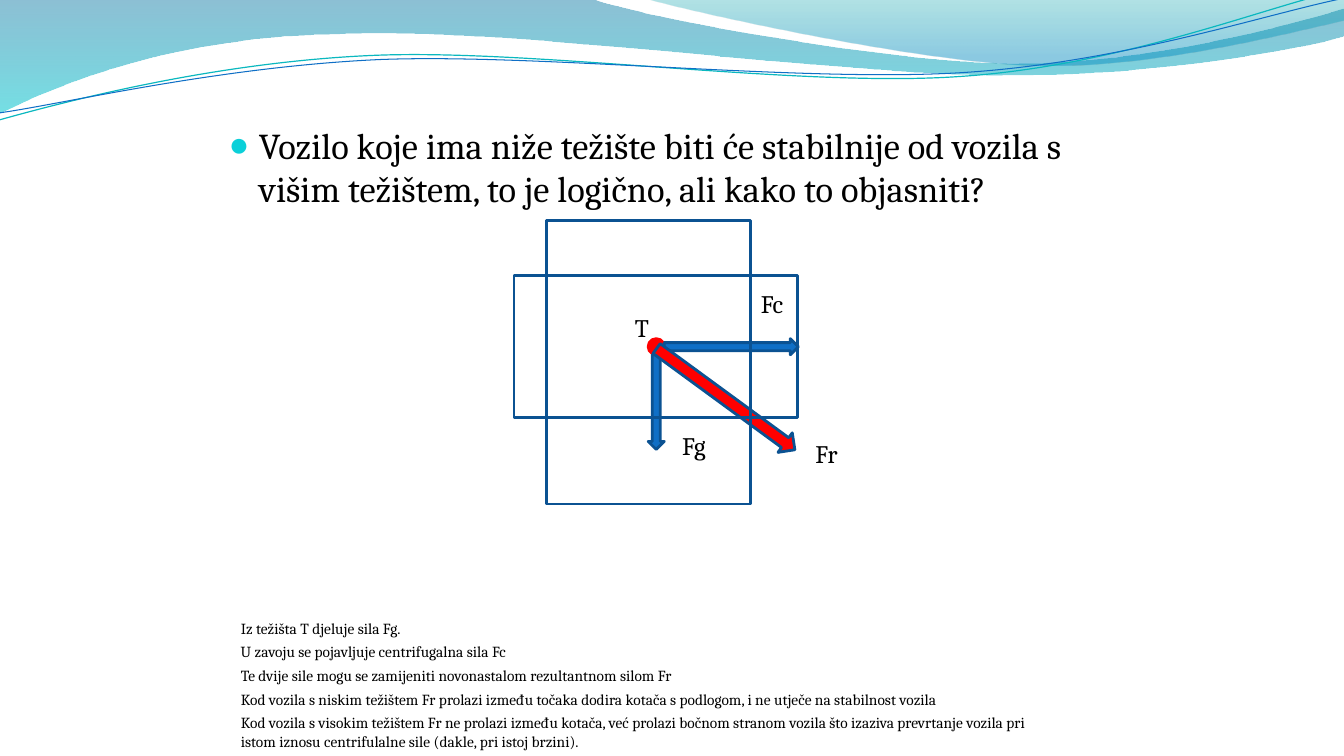
from lxml.etree import SubElement
from pptx import Presentation
from pptx.dml.color import RGBColor
from pptx.enum.shapes import MSO_SHAPE
from pptx.enum.text import MSO_AUTO_SIZE, PP_ALIGN
from pptx.oxml.ns import qn
from pptx.util import Pt

BLACK = RGBColor(0x00, 0x00, 0x00)
RED = RGBColor(0xFF, 0x00, 0x00)
BLUE = RGBColor(0x0F, 0x6F, 0xC6)
DARK_BLUE = RGBColor(0x0B, 0x52, 0x92)
TEAL_LINE = RGBColor(0x0A, 0xB8, 0xBF)
DEEP_BLUE = RGBColor(0x00, 0x74, 0xA1)
CYAN = RGBColor(0x00, 0xC6, 0xCF)
TEAL = RGBColor(0x00, 0xA1, 0xA9)
SKY_BLUE = RGBColor(0x00, 0x8B, 0xBF)
BULLET_COLOUR = RGBColor(0x0B, 0xD0, 0xD9)
FONT = "Cambria"

presentation = Presentation()
presentation.slide_width = Pt(960)
presentation.slide_height = Pt(540)
slide = presentation.slides.add_slide(presentation.slide_layouts[1])
title = slide.shapes.title
title.element.getparent().remove(title.element)
body = slide.placeholders[1]


def add_wave(start, segments, closed):
    """Draw an outline; pairs are line ends, sixes are cubic Bézier curves."""
    points = [(Pt(x), Pt(y)) for segment in segments
              for x, y in zip(segment[::2], segment[1::2])]
    builder = slide.shapes.build_freeform(Pt(start[0]), Pt(start[1]))
    builder.add_line_segments(points, close=closed)
    wave = builder.convert_to_shape()
    wave.shadow.inherit = False
    steps = iter(list(wave.element.iter(qn("a:lnTo"))))
    for segment in segments:
        first = next(steps)
        if len(segment) == 6:
            first.tag = qn("a:cubicBezTo")
            for step in (next(steps), next(steps)):
                first.append(step[0])
                step.getparent().remove(step)
    return wave


def add_label(text, left, top, width, height, size, wrap):
    label = slide.shapes.add_textbox(Pt(left), Pt(top), Pt(width), Pt(height))
    label.text_frame.word_wrap = wrap
    label.text_frame.auto_size = MSO_AUTO_SIZE.SHAPE_TO_FIT_TEXT
    label.text_frame.text = text
    font = label.text_frame.paragraphs[0].runs[0].font
    font.name = FONT
    font.size = Pt(size)
    font.color.rgb = BLACK


# Header bands: start, segments, gradient stops (position, colour, opacity)
bands = [
    ((0, 0),
     [(422.6, -0.7), (456.5, 12.2, 637.2, 45.4, 727.9, 45.4),
      (819.4, 45.4, 920.2, 18.7, 959.8, 6.5), (961.2, 25.9),
      (943.9, 31.7, 835.2, 54.7, 715.7, 54), (596.9, 54, 366.5, 20.2, 247, 24.5),
      (123.8, 25.9, 43.9, 59.8, -0.7, 81.4), (0, 0)],
     [(0, DEEP_BLUE, 45), (1, CYAN, 55)]),
    ((460.1, -0.7),
     [(488.9, 7.9, 654.5, 44.6, 738, 46.8), (821.5, 49.7, 923, 23, 959.8, 15.1),
      (959.8, 0), (460.1, -0.7)],
     [(0, TEAL, 30), (0.8, SKY_BLUE, 45)]),
]
for start, segments, stops in bands:
    band = add_wave(start, segments, True)
    band.line.fill.background()
    band.fill.gradient()
    band.fill.gradient_angle = 270
    for stop, (position, colour, opacity) in zip(band.fill.gradient_stops, stops):
        stop.position = position
        stop.color.rgb = colour
    colour_elements = list(band.element.spPr.iter(qn("a:srgbClr")))
    for element, (position, colour, opacity) in zip(colour_elements, stops):
        SubElement(element, qn("a:alpha"), val=str(opacity * 1000))

# Header lines
header_lines = [
    ((-2.3, 63.1),
     [(45.1, 52.3, 152.1, 29.2, 266, 29.6), (379.8, 29.9, 567.7, 66.8, 683.1, 64.4),
      (798.6, 62.6, 902.6, 25.7, 960.1, 15.4)], TEAL_LINE, 0.85),
    ((-1.3, 57.9),
     [(44.4, 53.7, 157.1, 32.3, 272.4, 32.7), (386.9, 33.8, 571.5, 63.3, 686.9, 61.6),
      (802.3, 59.8, 904.7, 30.1, 962, 21.3)], BLUE, 0.75),
]
for start, segments, colour, width in header_lines:
    header_line = add_wave(start, segments, False)
    header_line.rotation = 357.3
    header_line.fill.background()
    header_line.line.color.rgb = colour
    header_line.line.width = Pt(width)

# Question
body.left, body.top, body.width, body.height = Pt(156.2), Pt(84.2), Pt(648), Pt(413.3)
body.text_frame.text = ("Vozilo koje ima niže težište biti će stabilnije od vozila s "
                        "višim težištem, to je logično, ali kako to objasniti?")
body.text_frame.auto_size = MSO_AUTO_SIZE.NONE
paragraph = body.text_frame.paragraphs[0]
paragraph.alignment = PP_ALIGN.LEFT
paragraph.space_before = Pt(5.2)
font = paragraph.runs[0].font
font.name = FONT
font.size = Pt(26)
font.color.rgb = BLACK
properties = paragraph._p.get_or_add_pPr()
properties.set("marL", str(Pt(21.6)))
properties.set("indent", str(-Pt(21.6)))
bullet_colour = SubElement(properties, qn("a:buClr"))
SubElement(bullet_colour, qn("a:srgbClr"), val=str(BULLET_COLOUR))
SubElement(properties, qn("a:buSzPct"), val="95000")
SubElement(properties, qn("a:buChar"), char="●")

# Centre of gravity, forces and the two vehicle outlines
diagram = [
    (MSO_SHAPE.OVAL, 463, 241.9, 11.5, 11.5, 0, RED, RED),
    (MSO_SHAPE.DOWN_ARROW, 463, 253.4, 11.5, 67.7, 0, BLUE, DARK_BLUE),
    (MSO_SHAPE.RIGHT_ARROW, 474.5, 241.9, 95.8, 11.5, 0, BLUE, DARK_BLUE),
    (MSO_SHAPE.DOWN_ARROW, 509.8, 223.9, 17.3, 122.4, 306.2, RED, DARK_BLUE),
    (MSO_SHAPE.RECTANGLE, 367.2, 196.6, 202.3, 101.5, 0, None, DARK_BLUE),
    (MSO_SHAPE.RECTANGLE, 390.2, 157.7, 146.2, 202.3, 0, None, DARK_BLUE),
]
for kind, left, top, width, height, rotation, fill, line in diagram:
    shape = slide.shapes.add_shape(kind, Pt(left), Pt(top), Pt(width), Pt(height))
    shape.shadow.inherit = False
    shape.rotation = rotation
    if fill is None:
        shape.fill.background()
    else:
        shape.fill.solid()
        shape.fill.fore_color.rgb = fill
    shape.line.color.rgb = line
    shape.line.width = Pt(2)

add_label("T", 446.4, 219.6, 16.6, 28.8, 18, True)
for text, left, top, width in [("Fg", 480.2, 303.8, 33.8), ("Fc", 536.4, 202.3, 32.4),
                               ("Fr", 575.3, 309.6, 31)]:
    add_label(text, left, top, width, 28.8, 18, False)

# Explanation: text, width, height, wrap
notes = [
    ("Iz težišta T djeluje sila Fg.", 618.5, 20.9, True),
    ("U zavoju se pojavljuje centrifugalna sila Fc", 326.2, 20.9, True),
    ("Te dvije sile mogu se zamijeniti novonastalom rezultantnom silom Fr",
     347, 20.9, False),
    ("Kod vozila s niskim težištem Fr prolazi između točaka dodira kotača s podlogom, "
     "i ne utječe na stabilnost vozila", 553, 20.9, False),
    ("Kod vozila s visokim težištem Fr ne prolazi između kotača, već prolazi bočnom "
     "stranom vozila što izaziva prevrtanje vozila pri istom iznosu centrifulalne sile "
     "(dakle, pri istoj brzini).", 602, 33.8, True),
]
for index, (note, width, height, wrap) in enumerate(notes):
    add_label(note, 164.9, 438.5 + 16.92 * index, width, height, 11, wrap)

presentation.save("out.pptx")
